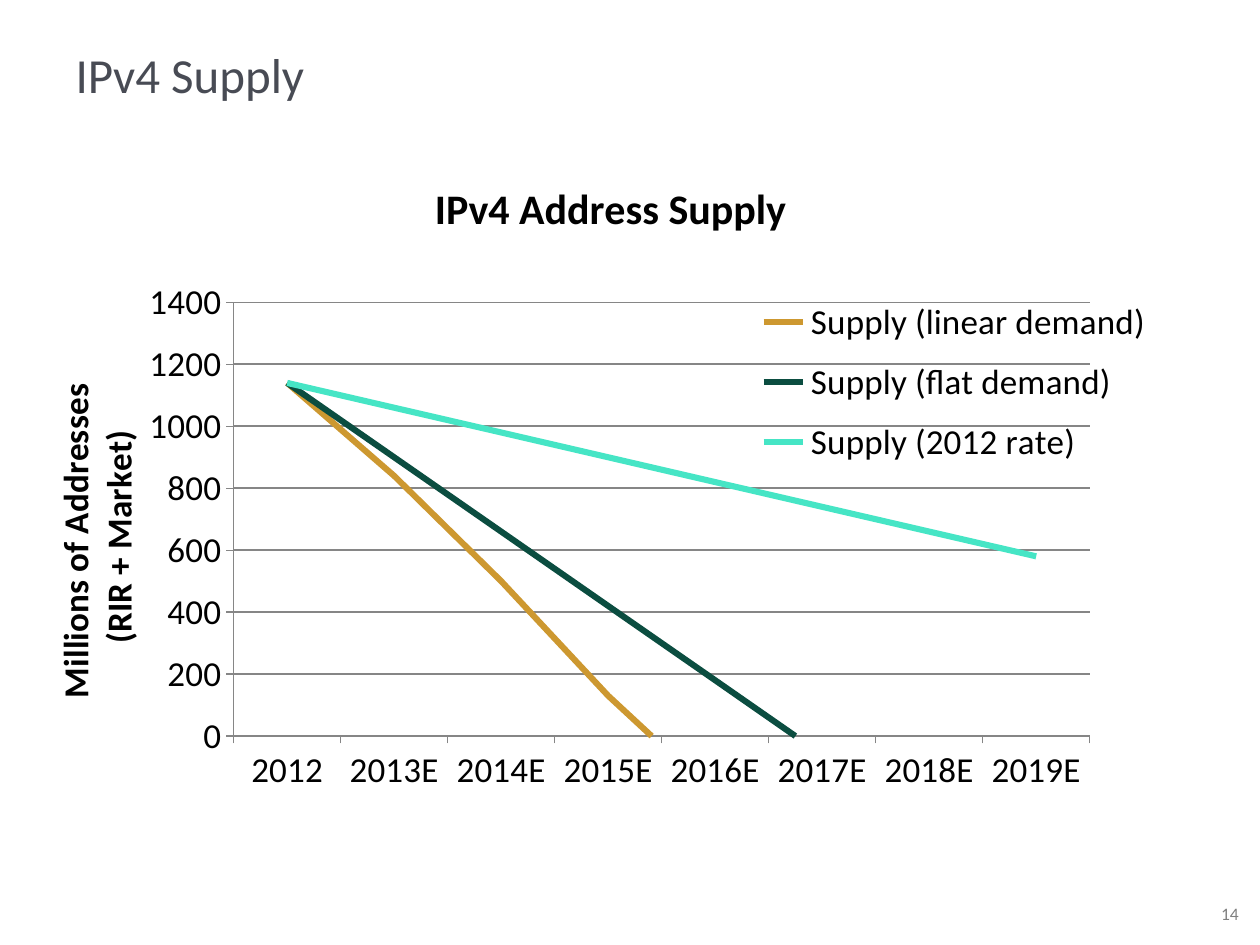
from lxml.etree import SubElement
from pptx import Presentation
from pptx.chart.data import CategoryChartData
from pptx.dml.color import RGBColor
from pptx.enum.chart import XL_CHART_TYPE, XL_LEGEND_POSITION, XL_TICK_MARK
from pptx.enum.text import MSO_ANCHOR, PP_ALIGN
from pptx.oxml import parse_xml
from pptx.oxml.ns import nsdecls, qn
from pptx.util import Inches, Pt

FONT = "Calibri"
YEARS = ["2012", "2013E", "2014E", "2015E", "2016E", "2017E", "2018E", "2019E"]
SUPPLY = [
    ("Supply (linear demand)", "CD9830", [1140, 840, 500, 130, -190, None, None, None]),
    ("Supply (flat demand)", "0B4D40", [1140, 900, 660, 420, 180, -60, None, None]),
    ("Supply (2012 rate)", "46E5C5", [1140, 1060, 980, 900, 820, 740, 660, 580]),
]


def color(value):
    return RGBColor.from_string(value)


def set_font(font, size, value, bold=False):
    font.name = FONT
    font.size = Pt(size)
    font.bold = bold
    font.color.rgb = color(value)


def set_line(line, value, width):
    line.color.rgb = color(value)
    line.width = Pt(width)


def set_layout(chart, target, index, **values):
    """Give a chart part a manual layout, in fractions of the chart."""
    part = chart.element.xpath(target)[0]
    for old in part.findall(qn("c:layout")):
        part.remove(old)
    layout = parse_xml(f"<c:layout {nsdecls('c')}><c:manualLayout/></c:layout>")
    for name, value in values.items():
        SubElement(layout[0], qn(f"c:{name}")).set("val", str(value))
    part.insert(index, layout)


def set_title(owner, lines, size):
    owner.has_title = True
    title = owner.chart_title if hasattr(owner, "chart_title") else owner.axis_title
    title.text_frame.text = "\n".join(lines)
    for para in title.text_frame.paragraphs:
        para.alignment = PP_ALIGN.CENTER
        set_font(para.font, size, "000000", bold=True)
    return title


def add_title(page, left, top, width, height):
    title = page.shapes.title
    title.left, title.top, title.width, title.height = left, top, width, height
    frame = title.text_frame
    frame.text = "IPv4 Supply"
    frame.vertical_anchor = MSO_ANCHOR.TOP
    para = frame.paragraphs[0]
    para.alignment = PP_ALIGN.LEFT
    set_font(para.font, 28, "484B54")


def add_page_number(page, left, top, width, height):
    frame = page.shapes.add_textbox(left, top, width, height).text_frame
    frame.word_wrap = True
    frame.vertical_anchor = MSO_ANCHOR.MIDDLE
    para = frame.paragraphs[0]
    para.text = "14"
    para.alignment = PP_ALIGN.RIGHT
    set_font(para.font, 10, "808080")


def style_axes(chart):
    for axis in (chart.category_axis, chart.value_axis):
        axis.major_tick_mark = XL_TICK_MARK.OUTSIDE
        axis.minor_tick_mark = XL_TICK_MARK.NONE
        set_line(axis.format.line, "868686", 0.75)
    axis = chart.value_axis
    axis.minimum_scale, axis.maximum_scale, axis.major_unit = 0, 1400, 200
    axis.has_major_gridlines = True
    set_line(axis.major_gridlines.format.line, "868686", 1)
    title = set_title(axis, ["Millions of Addresses ", "(RIR + Market)"], 20)
    body = title.text_frame._txBody.bodyPr
    body.set("rot", "-5400000")
    body.set("vert", "horz")


def add_supply_chart(page, left, top, width, height):
    data = CategoryChartData()
    data.categories = YEARS
    for name, _, values in SUPPLY:
        data.add_series(name, values)
    chart = page.shapes.add_chart(
        XL_CHART_TYPE.LINE, left, top, width, height, data).chart
    set_font(chart.font, 20, "000000")
    set_title(chart, ["IPv4 Address Supply"], 24)
    style_axes(chart)

    chart.plots[0].vary_by_categories = False
    for series, (_, value, _) in zip(chart.series, SUPPLY):
        series.smooth = False
        set_line(series.format.line, value, 3.5)

    chart.has_legend = True
    chart.legend.position = XL_LEGEND_POSITION.RIGHT
    chart.legend.include_in_layout = True
    set_font(chart.legend.font, 20, "000000")

    edge = {"xMode": "edge", "yMode": "edge"}
    set_layout(chart, "c:chart/c:title", 1, **edge, x=0.337, y=0.03)
    set_layout(chart, ".//c:valAx/c:title", 1, **edge, x=0, y=0.308)
    set_layout(chart, ".//c:plotArea", 0, layoutTarget="inner", **edge,
               x=0.165, y=0.211, w=0.76, h=0.605)
    set_layout(chart, ".//c:legend", 1, **edge, x=0.62, y=0.185, w=0.37, h=0.275)


def main():
    deck = Presentation()
    deck.slide_width, deck.slide_height = Inches(10), Inches(7.5)
    page = deck.slides.add_slide(deck.slide_layouts[5])
    add_title(page, Inches(0.5), Inches(0.3), Inches(8.26), Inches(1.25))
    add_page_number(page, Inches(7.6), Inches(7.05), Inches(2.33), Inches(0.4))
    add_supply_chart(page, Inches(0.38), Inches(1.2), Inches(8.94), Inches(5.69))
    deck.save("out.pptx")


if __name__ == "__main__":
    main()
